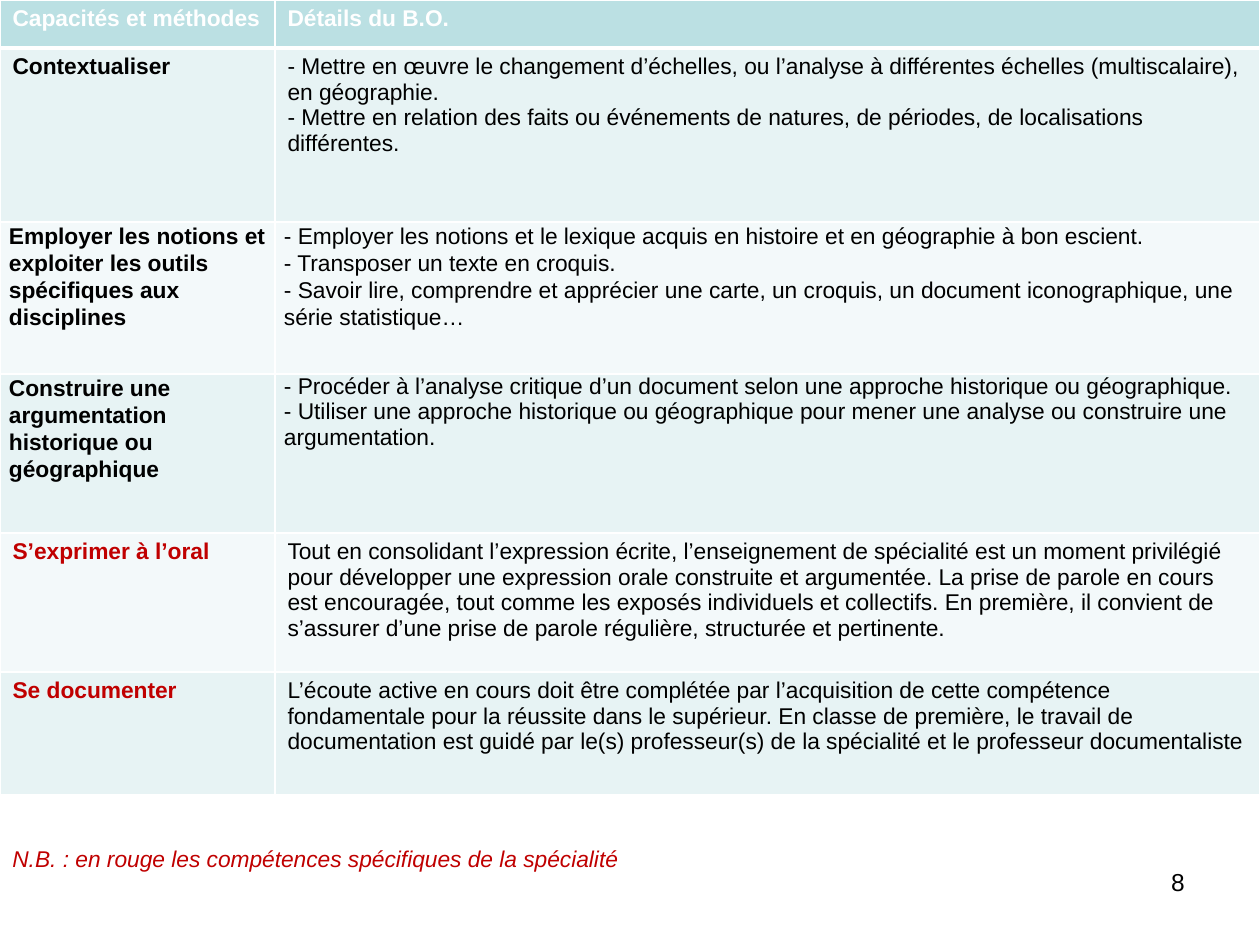
from lxml import etree
from pptx import Presentation
from pptx.dml.color import RGBColor
from pptx.enum.text import PP_ALIGN
from pptx.oxml.ns import qn
from pptx.util import Emu, Pt

RIGHT = PP_ALIGN.RIGHT
WHITE = RGBColor(0xFF, 0xFF, 0xFF)
BLACK = RGBColor(0, 0, 0)
RED = RGBColor(0xC0, 0, 0)
HEADER_FILL = RGBColor(0xBB, 0xE0, 0xE3)
BAND_FILLS = (RGBColor(0xE7, 0xF3, 0xF4), RGBColor(0xF3, 0xF9, 0xFA))

COLUMN_WIDTHS = (275, 985)
ROW_HEIGHTS = (48, 174, 152, 159, 139, 123)
TIGHT_MARGIN = 9
LOOSE = 1.07

HEADINGS = ("Capacités et méthodes", "Détails du B.O.")
SKILLS = (
    ("Contextualiser", BLACK, False, None, None, (
        "- Mettre en œuvre le changement d’échelles, ou l’analyse à différentes échelles (multiscalaire), en géographie.",
        "- Mettre en relation des faits ou événements de natures, de périodes, de localisations différentes.")),
    ("Employer les notions et exploiter les outils spécifiques aux disciplines", BLACK, True, LOOSE, LOOSE, (
        "- Employer les notions et le lexique acquis en histoire et en géographie à bon escient.",
        "- Transposer un texte en croquis.",
        "- Savoir lire, comprendre et apprécier une carte, un croquis, un document iconographique, une série statistique…")),
    ("Construire une argumentation historique ou géographique", BLACK, True, LOOSE, None, (
        "- Procéder à l’analyse critique d’un document selon une approche historique ou géographique.",
        "- Utiliser une approche historique ou géographique pour mener une analyse ou construire une argumentation.")),
    ("S’exprimer à l’oral", RED, False, None, None, (
        "Tout en consolidant l’expression écrite, l’enseignement de spécialité est un moment privilégié pour développer une expression orale construite et argumentée. La prise de parole en cours est encouragée, tout comme les exposés individuels et collectifs. En première, il convient de s’assurer d’une prise de parole régulière, structurée et pertinente.",)),
    ("Se documenter", RED, False, None, None, (
        "L’écoute active en cours doit être complétée par l’acquisition de cette compétence fondamentale pour la réussite dans le supérieur. En classe de première, le travail de documentation est guidé par le(s) professeur(s) de la spécialité et le professeur documentaliste",)),
)


def px(length):
    """Turn pixels into EMU."""
    return Emu(round(length * 914400 / 126))


def write(frame, lines, color, size=13, bold=False, italic=False, spacing=None):
    """Fill a text frame with one paragraph per line."""
    frame.text = "\n".join(lines)
    for paragraph in frame.paragraphs:
        if spacing:
            paragraph.line_spacing = spacing
        for span in paragraph.runs:
            font = span.font
            font.name, font.size = "Arial", Pt(size)
            font.bold, font.italic = bold, italic
            font.color.rgb = color


def add_borders(cell, bottom):
    """Draw white borders, with the given bottom width in points."""
    properties = cell._tc.get_or_add_tcPr()
    widths = (("a:lnL", 1), ("a:lnR", 1), ("a:lnT", 1), ("a:lnB", bottom))
    for position, (tag, width) in enumerate(widths):
        line = etree.Element(qn(tag), w=str(Pt(width)))
        fill = etree.SubElement(line, qn("a:solidFill"))
        etree.SubElement(fill, qn("a:srgbClr"), val=str(WHITE))
        properties.insert(position, line)


def fill_cell(cell, lines, color, fill, bold=False, spacing=None, tight=False, bottom=1):
    """Write and style one table cell."""
    if tight:
        cell.margin_left = cell.margin_right = px(TIGHT_MARGIN)
        cell.margin_top = cell.margin_bottom = 0
    write(cell.text_frame, lines, color, bold=bold, spacing=spacing)
    cell.fill.solid()
    cell.fill.fore_color.rgb = fill
    add_borders(cell, bottom)


def add_skills_table(page):
    """Add the table of skills and their details."""
    frame = page.shapes.add_table(
        len(ROW_HEIGHTS), len(COLUMN_WIDTHS), 0, 0,
        px(sum(COLUMN_WIDTHS)), px(sum(ROW_HEIGHTS)))
    table = frame.table
    for column, width in zip(table.columns, COLUMN_WIDTHS):
        column.width = px(width)
    for row, height in zip(table.rows, ROW_HEIGHTS):
        row.height = px(height)
    for index, heading in enumerate(HEADINGS):
        fill_cell(table.cell(0, index), [heading], WHITE, HEADER_FILL, bold=True, bottom=3)
    for row, skill in enumerate(SKILLS, start=1):
        name, color, tight, name_spacing, detail_spacing, details = skill
        fill = BAND_FILLS[(row - 1) % 2]
        fill_cell(table.cell(row, 0), [name], color, fill, True, name_spacing, tight)
        fill_cell(table.cell(row, 1), details, BLACK, fill, False, detail_spacing, tight)


def add_text(page, left, top, width, height, text, color, size, italic=False, align=None):
    """Add a wrapped text box with one line of text."""
    box = page.shapes.add_textbox(px(left), px(top), px(width), px(height))
    box.text_frame.word_wrap = True
    write(box.text_frame, [text], color, size, italic=italic)
    box.text_frame.paragraphs[0].alignment = align


def main():
    """Build the slide and save the deck."""
    deck = Presentation()
    deck.slide_width, deck.slide_height = px(1260), px(945)
    page = deck.slides.add_slide(deck.slide_layouts[6])
    add_text(page, 903, 861, 294, 66, "8", BLACK, 14, align=RIGHT)
    add_skills_table(page)
    add_text(page, 0, 839, 1145, 40,
             "N.B. : en rouge les compétences spécifiques de la spécialité", RED, 13, italic=True)
    deck.save("out.pptx")


if __name__ == "__main__":
    main()
